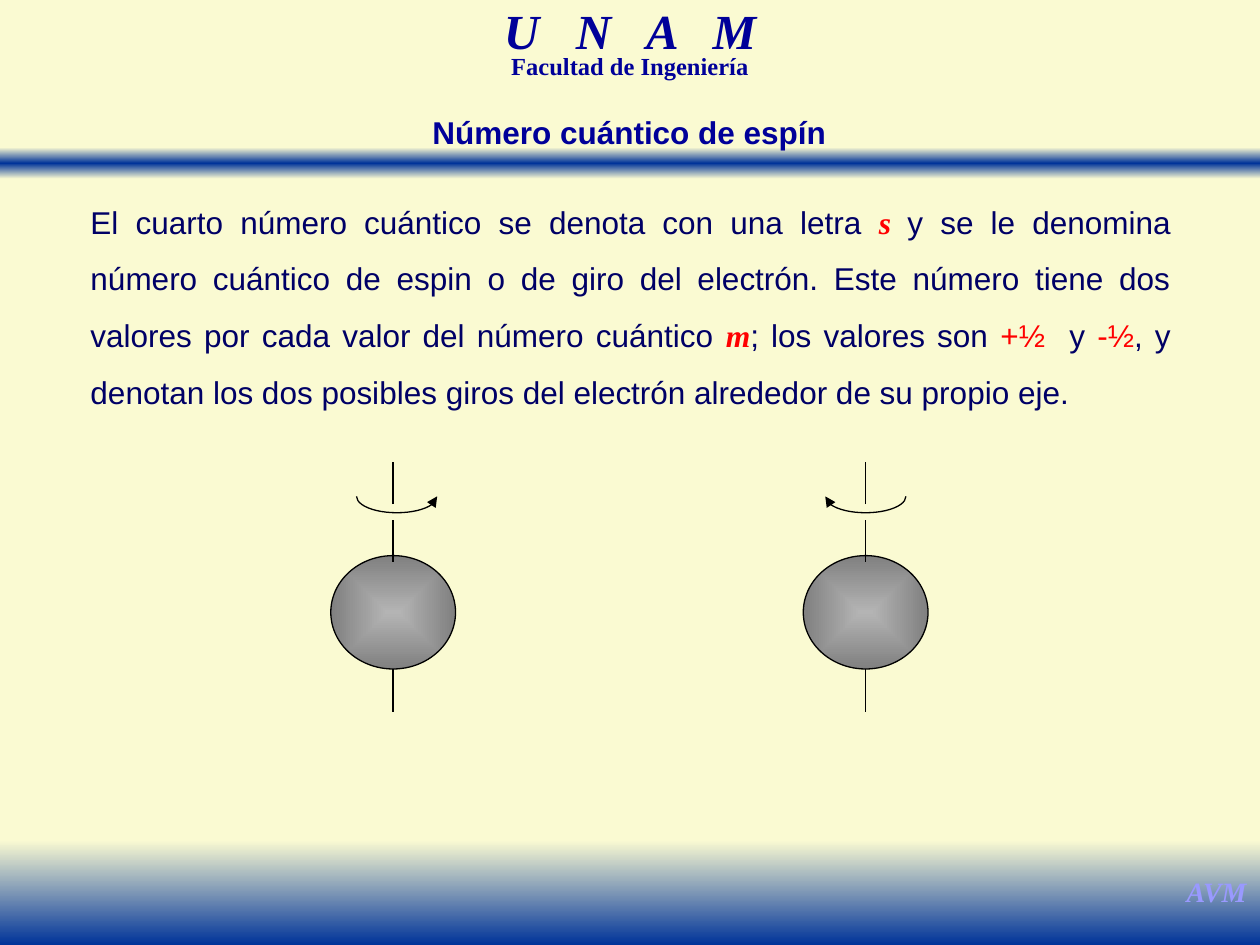
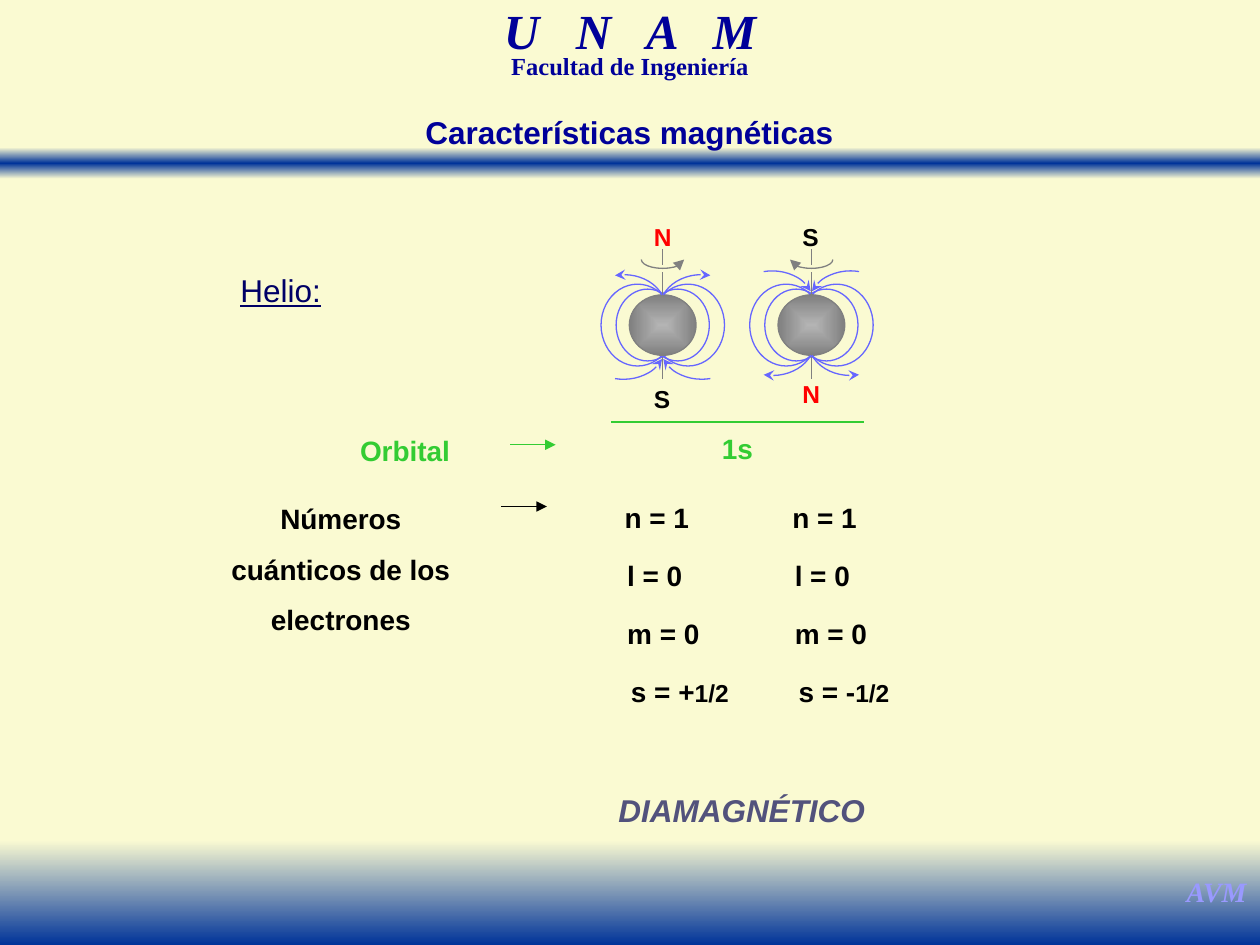
from lxml.etree import SubElement
from pptx import Presentation
from pptx.dml.color import RGBColor
from pptx.enum.shapes import MSO_CONNECTOR, MSO_SHAPE
from pptx.enum.text import MSO_ANCHOR, PP_ALIGN
from pptx.oxml import parse_xml
from pptx.oxml.ns import nsdecls, qn
from pptx.util import Emu, Pt

SCALE = 9144  # EMU in one px, 100 px to the inch
WIDE, HIGH = 1000, 750
SERIF, SANS = "Times New Roman", "Arial"
CENTER = PP_ALIGN.CENTER
HEX = {
    "cream": "FAFAD2", "band": "003399", "title": "000099", "body": "000066",
    "sign": "9999FF", "red": "FF0000", "green": "33CC33", "black": "000000",
    "field": "6666FF", "gray": "808080", "light": "B4B4B4", "slate": "52527C",
}
DOWN = '<a:lin ang="5400000" scaled="0"/>'
RADIAL = '<a:path path="shape"><a:fillToRect l="50000" t="50000" r="50000" b="50000"/></a:path>'
# Arc angles of a field line, by side (-1 left) and pole (-1 top)
FIELD = {(-1, -1): (255, 342), (1, -1): (198, 285),
         (-1, 1): (18, 105), (1, 1): (75, 162)}


def px(n):
    return Emu(int(n * SCALE))


def rgb(name):
    return RGBColor.from_string(HEX[name])


def style(font, size=None, color=None, face=None, **flags):
    if size:
        font.size = Pt(size)
    if color:
        font.color.rgb = rgb(color)
    if face:
        font.name = face
    for flag, value in flags.items():
        setattr(font, flag, value)


def blend(shape, names, kind):
    """Fill a shape with evenly spaced gradient stops."""
    last = len(names) - 1
    stops = "".join(
        f'<a:gs pos="{100000 * i // last}"><a:srgbClr val="{HEX[name]}"/></a:gs>'
        for i, name in enumerate(names))
    shape.fill.background()
    props = shape._element.spPr
    grad = parse_xml(f'<a:gradFill {nsdecls("a")} rotWithShape="1">'
                     f'<a:gsLst>{stops}</a:gsLst>{kind}</a:gradFill>')
    props.replace(props.find(qn("a:noFill")), grad)


class Deck:
    def __init__(self):
        self.prs = Presentation()
        self.prs.slide_width, self.prs.slide_height = px(WIDE), px(HIGH)
        back = self.prs.slide_master.background.fill
        back.solid()
        back.fore_color.rgb = rgb("cream")
        self.slide = None

    def page(self, title):
        """Start a slide with its bands, headings and title."""
        self.slide = self.prs.slides.add_slide(self.prs.slide_layouts[5])
        self.band(117, 25, ["cream", "band", "cream"])
        self.text((304, 8, 392, 43), "U   N   A   M", 28, "title", SERIF,
                  CENTER, 0.7, bold=True, italic=True)
        self.text((321, 42, 358, 26), "Facultad de Ingeniería", 14, "title",
                  SERIF, CENTER, 0.7, bold=True)
        self.band(667, 83, ["cream", "band"])
        self.text((931, 689, 69, 37), "AVM", 16, "sign", SERIF, CENTER,
                  wrap=False, bold=True, italic=True)
        head = self.slide.shapes.title
        head.left, head.top, head.width, head.height = map(px, (283, 93, 433, 32))
        self.label(head, title, 18, "title", SANS, CENTER, 0.7, bold=True)
        self.slide.shapes._spTree.append(head._element)

    def band(self, top, high, names):
        shape = self.shape(MSO_SHAPE.RECTANGLE, (0, top, WIDE, high))
        blend(shape, names, DOWN)

    def text(self, box, parts, *args, **flags):
        self.label(self.slide.shapes.add_textbox(*map(px, box)),
                   parts, *args, **flags)

    def label(self, shape, parts, size=16, color="black", face=SANS,
              align=PP_ALIGN.JUSTIFY, space=1.0, wrap=True, **flags):
        """Fill a text shape; parts is a string or (text, changes) pairs."""
        frame = shape.text_frame
        frame.word_wrap = wrap
        frame.vertical_anchor = MSO_ANCHOR.TOP
        para = frame.paragraphs[0]
        para.alignment, para.line_spacing = align, space
        style(para.font, size, color, face, **flags)
        for words, change in [(parts, {})] if isinstance(parts, str) else parts:
            run = para.add_run()
            run.text = words
            style(run.font, **change)

    def shape(self, kind, box, color=None):
        """Add an unfilled shape, outlined when a colour is given."""
        shape = self.slide.shapes.add_shape(kind, *map(px, box))
        shape.shadow.inherit = False
        shape.fill.background()
        if color:
            self.stroke(shape, color)
        else:
            shape.line.fill.background()
        return shape

    def stroke(self, shape, color, end=None, tip="triangle"):
        """Set a line; end is headEnd (start), tailEnd (finish) or None."""
        shape.line.color.rgb = rgb(color)
        shape.line.width = Pt(0.75)
        if end:
            SubElement(shape.line._get_or_add_ln(), qn("a:" + end), type=tip)

    def line(self, x1, y1, x2, y2, color, end=None):
        line = self.slide.shapes.add_connector(
            MSO_CONNECTOR.STRAIGHT, *map(px, (x1, y1, x2, y2)))
        self.stroke(line, color, end)
        SubElement(line._element.spPr, qn("a:effectLst"))

    def oval(self, x, y, wide, high, color):
        """Add an ellipse centred on x, y."""
        return self.shape(MSO_SHAPE.OVAL,
                          (x - wide / 2, y - high / 2, wide, high), color)

    def arc(self, x, y, rx, ry, angles, color, end, tip="triangle"):
        arc = self.shape(MSO_SHAPE.ARC, (x - rx, y - ry, 2 * rx, 2 * ry), color)
        for i, angle in enumerate(angles):
            arc.adjustments[i] = angle * 0.6
        self.stroke(arc, color, end, tip)

    def spin(self, x, y, size, axis, ring, right, color):
        """Add a sphere, its axis pieces and the turning arrow (dx, dy, rx, ry)."""
        blend(self.oval(x, y, *size, color), ["light", "gray"], RADIAL)
        for start, stop in axis:
            self.line(x, y + start, x, y + stop, color)
        dx, dy, rx, ry = ring
        self.arc(x + dx, y + dy, rx, ry, (0, 180), color,
                 "headEnd" if right else "tailEnd")

    def magnet(self, x, y, north):
        """Add a spinning electron with its field; north is -1 when N is on top."""
        for reach, wide, high in [(20, 58, 65), (12, 50, 57)]:
            for side in (1, -1):
                self.oval(x + side * reach, y, wide, high, "field")
        self.spin(x, y, (53, 48), [(25, 43), (-24, -42), (-48, -60)],
                  (0, -52, 17, 7), north < 0, "gray")
        for (side, pole), angles in FIELD.items():
            out = pole == north
            first = (side == pole) == out
            self.arc(x + 31 * side, y + pole * (14 if out else 17), 33, 26,
                     angles, "field", "headEnd" if first else "tailEnd", "stealth")
        for pole, top in [(-1, 171), (1, 300 if north < 0 else 296)]:
            name, color = ("N", "red") if pole == north else ("S", "black")
            self.text((x - 17, top, 35, 33), name, 14, color, bold=True)


def spin_page(deck):
    deck.page("Número cuántico de espín")
    red = {"color": "red"}
    mark = dict(red, face=SERIF, bold=True, italic=True)
    deck.text((62, 141, 877, 191), [
        ("El cuarto número cuántico se denota con una letra ", {}),
        ("s ", mark),
        ("y se le denomina número cuántico de espin o de giro del electrón. "
         "Este número tiene dos valores por cada valor del número cuántico ", {}),
        ("m", mark),
        ("; los valores son ", {}),
        ("+½  ", red),
        ("y ", {}),
        ("-½", red),
        (", y denotan los dos posibles giros del electrón alrededor de su "
         "propio eje.", {}),
    ], 18, "body", space=1.5)
    axis = [(45, 79), (-40, -73), (-86, -119)]
    for x, shift, right in [(312, 3, True), (687, 0, False)]:
        deck.spin(x, 486, (99, 90), axis, (shift, -92, 32, 13), right, "black")


def magnet_page(deck):
    deck.page("Características magnéticas")
    deck.text((181, 195, 93, 55), "Helio:", 18, "body", space=1.5, underline=True)
    for box, words in [((276, 326, 116, 51), "Orbital"), ((563, 324, 49, 51), "1s")]:
        deck.text(box, words, color="green", space=1.5, bold=True)
    deck.line(405, 353, 441, 353, "green", "tailEnd")
    deck.line(485, 335, 686, 335, "green")
    deck.magnet(526, 258, -1)
    deck.magnet(644, 258, 1)
    deck.text((168, 380, 205, 131), "Números cuánticos de los electrones",
              align=CENTER, space=1.5, bold=True)
    deck.line(398, 402, 434, 402, "black", "tailEnd")
    for x, sign in [(486, "+"), (619, "-")]:
        half = [("s = " + sign, {}), ("1/2", {"size": 14})]
        rows = [("n = 1", 0), ("l = 0", 2), ("m = 0", 2), (half, 5)]
        for i, (words, shift) in enumerate(rows):
            deck.text((x + shift, 379 + 46 * i, 120, 51), words,
                      space=1.5, bold=True)
    deck.text((481, 608, 247, 55), "DIAMAGNÉTICO", 18, "slate", space=1.5,
              bold=True, italic=True)


def main():
    deck = Deck()
    spin_page(deck)
    magnet_page(deck)
    deck.prs.save("out.pptx")


if __name__ == "__main__":
    main()
